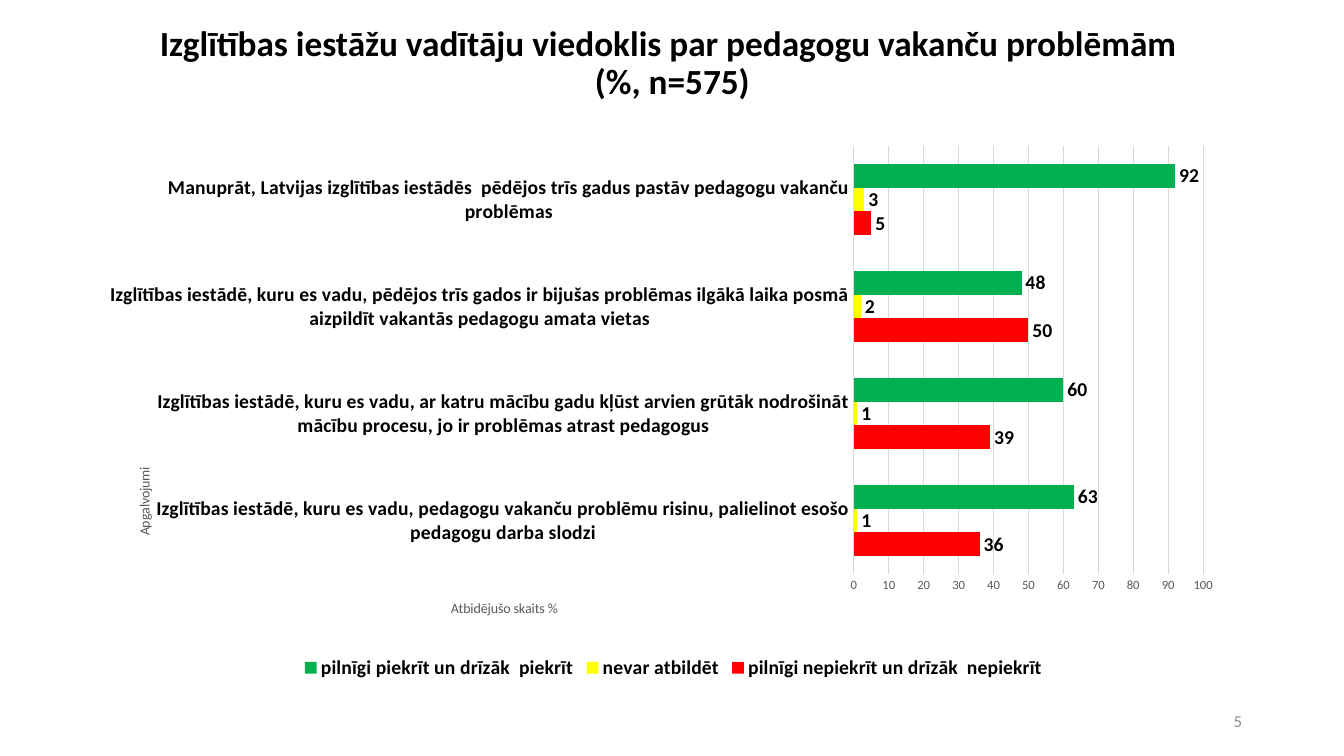
from pptx import Presentation
from pptx import util as u
from pptx.chart.data import CategoryChartData
from pptx.dml.color import RGBColor
from pptx.enum import chart as ch, text
from pptx.oxml import parse_xml
from pptx.oxml.ns import nsdecls, qn

FONT = "Calibri"
BLACK = RGBColor(0, 0, 0)
GREY = RGBColor(0x59, 0x59, 0x59)
PALE_GREY = RGBColor(0x8C, 0x8C, 0x8C)
GRID = RGBColor(0xD9, 0xD9, 0xD9)
RED = RGBColor(0xFF, 0, 0)
YELLOW = RGBColor(0xFF, 0xFF, 0)
GREEN = RGBColor(0, 0xB0, 0x50)

STATEMENTS = [
    "Izglītības iestādē, kuru es vadu, pedagogu vakanču problēmu risinu, palielinot esošo pedagogu darba slodzi",
    "Izglītības iestādē, kuru es vadu, ar katru mācību gadu kļūst arvien grūtāk nodrošināt mācību procesu, "
    "jo ir problēmas atrast pedagogus",
    "Izglītības iestādē, kuru es vadu, pēdējos trīs gados ir bijušas problēmas ilgākā laika posmā "
    "aizpildīt vakantās pedagogu amata vietas",
    "Manuprāt, Latvijas izglītības iestādēs  pēdējos trīs gadus pastāv pedagogu vakanču problēmas",
]
ANSWERS = [
    ("pilnīgi nepiekrīt un drīzāk  nepiekrīt", (36, 39, 50, 5), RED),
    ("nevar atbildēt", (1, 1, 2, 3), YELLOW),
    ("pilnīgi piekrīt un drīzāk  piekrīt", (63, 60, 48, 92), GREEN),
]


def px(n):
    return u.Emu(round(n * 914400 / 100.8))


def style(font, size, color, bold=False):
    font.name, font.size, font.bold = FONT, u.Pt(size), bold
    font.color.rgb = color


def place(element, index, **fractions):
    old = element.find(qn("c:layout"))
    if old is not None:
        element.remove(old)
    modes = '<c:xMode val="edge"/><c:yMode val="edge"/>'
    if "w" in fractions:
        modes = '<c:layoutTarget val="inner"/>' + modes
    sizes = "".join(f'<c:{k} val="{v}"/>' for k, v in fractions.items())
    element.insert(index, parse_xml(
        f'<c:layout {nsdecls("c")}><c:manualLayout>{modes}{sizes}</c:manualLayout></c:layout>'))


def add_title(s, box):
    sp = s.shapes.title
    sp.left, sp.top, sp.width, sp.height = map(px, box)
    tf = sp.text_frame
    tf.text = "Izglītības iestāžu vadītāju viedoklis par pedagogu vakanču problēmām \v(%, n=575)"
    tf.vertical_anchor = text.MSO_ANCHOR.MIDDLE
    tf.auto_size = text.MSO_AUTO_SIZE.NONE
    p = tf.paragraphs[0]
    p.alignment = text.PP_ALIGN.CENTER
    p.line_spacing = 0.9
    for r in p.runs:
        style(r.font, 25.2, BLACK, True)


def add_page_number(s, box):
    tf = s.shapes.add_textbox(*map(px, box)).text_frame
    tf.word_wrap = True
    tf.vertical_anchor = text.MSO_ANCHOR.MIDDLE
    tf.text = "5"
    p = tf.paragraphs[0]
    p.alignment = text.PP_ALIGN.RIGHT
    style(p.runs[0].font, 12, PALE_GREY)


def format_axis(axis, caption, x, y, rotation):
    axis.major_tick_mark = axis.minor_tick_mark = ch.XL_TICK_MARK.NONE
    axis.format.line.fill.background()
    tf = axis.axis_title.text_frame
    tf.text = caption
    style(tf.paragraphs[0].runs[0].font, 10, GREY)
    tf._txBody.bodyPr.set("rot", str(rotation))
    place(axis.axis_title._element, 1, x=x, y=y)


def add_opinion_chart(s, box):
    data = CategoryChartData()
    data.categories = STATEMENTS
    for name, values, _ in ANSWERS:
        data.add_series(name, values)
    chart = s.shapes.add_chart(ch.XL_CHART_TYPE.BAR_CLUSTERED, *map(px, box), data).chart
    style(chart.font, 10, BLACK)
    chart.has_title = False
    place(chart._chartSpace.chart.plotArea, 0, x=0.66, y=0.02, w=0.31, h=0.78)

    format_axis(chart.category_axis, "Apgalvojumi", 0.02, 0.6, -5400000)
    style(chart.category_axis.tick_labels.font, 14, BLACK, True)
    values = chart.value_axis
    format_axis(values, "Atbidējušo skaits %", 0.3, 0.84, 0)
    style(values.tick_labels.font, 9, GREY)
    values.minimum_scale, values.maximum_scale, values.major_unit = 0, 100, 10
    values.major_gridlines.format.line.color.rgb = GRID
    values.major_gridlines.format.line.width = u.Pt(0.75)

    plot = chart.plots[0]
    plot.gap_width, plot.overlap = 150, 0
    plot.vary_by_categories = False
    for series, (_, _, color) in zip(plot.series, ANSWERS):
        series.format.fill.solid()
        series.format.fill.fore_color.rgb = color
        labels = series.data_labels
        labels.show_value = True
        labels.position = ch.XL_LABEL_POSITION.OUTSIDE_END
        style(labels.font, 14, BLACK, True)

    chart.has_legend = True
    chart.legend.position = ch.XL_LEGEND_POSITION.BOTTOM
    chart.legend.include_in_layout = False
    style(chart.legend.font, 14, BLACK, True)


def main():
    prs = Presentation()
    prs.slide_width, prs.slide_height = px(1344), px(756)
    s = prs.slides.add_slide(prs.slide_layouts[5])
    add_title(s, (93, 40, 1159, 48))
    add_page_number(s, (950, 701, 302, 40))
    add_opinion_chart(s, (110, 135, 1127, 549))
    prs.save("out.pptx")


if __name__ == "__main__":
    main()
